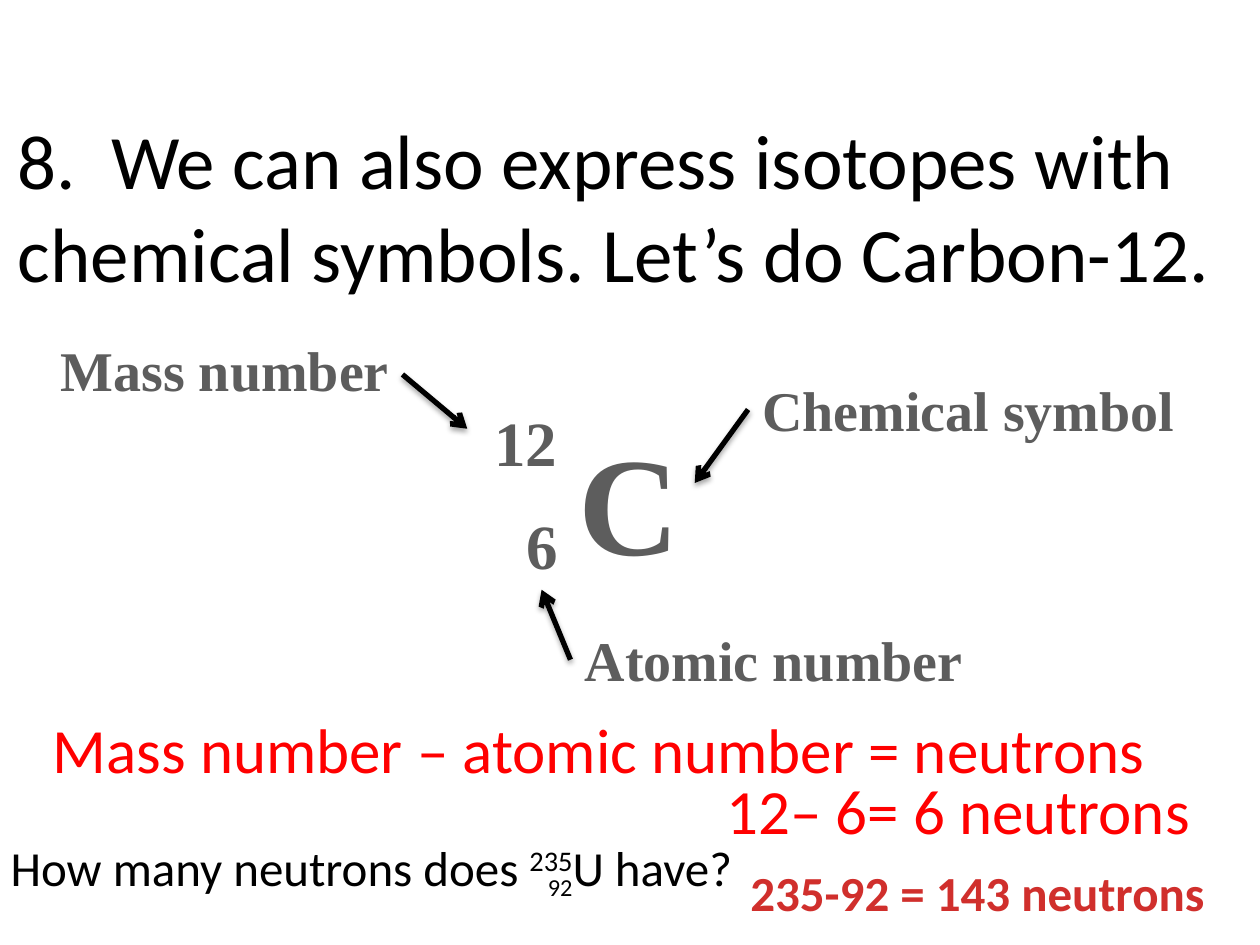
"""Build a slide on writing isotopes with chemical symbols."""
from typing import NamedTuple, Optional

from lxml.etree import SubElement
from pptx import Presentation
from pptx.dml.color import RGBColor
from pptx.enum.shapes import MSO_CONNECTOR as CONN
from pptx.enum.text import MSO_ANCHOR as ANCHOR, MSO_AUTO_SIZE as AUTO, PP_ALIGN as ALIGN
from pptx.oxml.ns import qn
from pptx.util import Pt

COLORS = {"black": "000000", "gray": "5D5D5D", "red": "FF0000", "crimson": "D02F2C"}
LINE_HEIGHT = 1.22
INSET = 3.6


class Run(NamedTuple):
    text: str
    raised: bool = False


class Style(NamedTuple):
    size: float
    color: str
    font: str = "Calibri"
    bold: bool = False


class Box(NamedTuple):
    left: float
    top: float
    width: float
    height: float
    runs: tuple[Run, ...]
    style: Style
    align: ALIGN = ALIGN.CENTER


class Arrow(NamedTuple):
    start: tuple[float, float]
    end: tuple[float, float]
    label: Optional[str] = None


SYMBOL = Style(80, "gray", "Times New Roman", True)
NUMBER = SYMBOL._replace(size=36)
LABEL = SYMBOL._replace(size=32)
RULE = Style(36, "red")
QUESTION = Style(28, "black")

TITLE = Box(3, 42, 720, 204, (Run(
    "8.  We can also express isotopes with chemical symbols. Let’s do Carbon-12."),),
    Style(44, "black"), ALIGN.LEFT)
STATEMENTS = [
    Box(23, 403, 720, 93, (Run("Mass number – atomic number = neutrons"),), RULE, ALIGN.LEFT),
    Box(408, 438, 396, 93, (Run("12– 6= 6 neutrons"),), RULE, ALIGN.LEFT),
    Box(-1, 484.5, 720, 55.5, (Run("How many neutrons does "), Run("235", True),
                               Run("U have?")), QUESTION, ALIGN.LEFT),
]
LABELS = [
    Box(323.5, 234, 72.5, 104.5, (Run("C"),), SYMBOL),
    Box(427.5, 211, 252, 46, (Run("Chemical symbol"),), LABEL),
    Box(326, 354, 232.5, 46, (Run("Atomic number"),), LABEL),
    Box(294, 286, 32, 51, (Run("6"),), NUMBER),
    Box(275, 227, 51, 51, (Run("12"),), NUMBER),
    Box(26.5, 188, 204, 46, (Run("Mass number"),), LABEL),
    Box(306, 492, 31, 36, (Run("92", True),), Style(24, "black"), ALIGN.LEFT),
    Box(420, 489.5, 277, 41, (Run("235-92 = 143 neutrons"),),
        QUESTION._replace(color="crimson", bold=True)),
]
ARROWS = [
    Arrow((427.5, 234), (397, 276), "Chemical symbol"),
    Arrow((326, 377), (309.5, 337), "Atomic number"),
    Arrow((230, 214), (267, 245)),
]


def fill_box(sp, box: Box, frame_format: dict) -> None:
    """Place a shape and write its formatted text."""
    for name in ("left", "top", "width", "height"):
        setattr(sp, name, Pt(getattr(box, name)))
    tf = sp.text_frame
    for name, value in frame_format.items():
        setattr(tf, name, value)
    p = tf.paragraphs[0]
    p.alignment = box.align
    style = box.style
    for run in box.runs:
        r = p.add_run()
        r.text = run.text
        for name, value in {"size": Pt(style.size), "name": style.font,
                            "bold": style.bold}.items():
            setattr(r.font, name, value)
        r.font.color.rgb = RGBColor.from_string(COLORS[style.color])
        if run.raised:
            r._r.get_or_add_rPr().set("baseline", "30000")


def fill_statement(sp, box: Box) -> None:
    """Write wrapped text that sits half a line above the middle of its box."""
    fill_box(sp, box, {
        "word_wrap": True, "auto_size": AUTO.NONE, "vertical_anchor": ANCHOR.MIDDLE,
        "margin_bottom": Pt(INSET + round(LINE_HEIGHT * box.style.size, 1))})


def add_text_box(s, box: Box):
    """Add an empty text box at the place of the given box."""
    return s.shapes.add_textbox(Pt(box.left), Pt(box.top), Pt(box.width), Pt(box.height))


def add_arrow(s, arrow: Arrow, labels: dict) -> None:
    """Draw a shadowed arrow, joined to its label's left side if it has one."""
    sp = s.shapes.add_connector(CONN.STRAIGHT, *map(Pt, arrow.start + arrow.end))
    if arrow.label:
        sp.begin_connect(labels[arrow.label], 1)
    sp.line.width = Pt(3)
    sp.line.color.rgb = RGBColor.from_string(COLORS["black"])
    SubElement(sp.line._get_or_add_ln(), qn("a:tailEnd"), type="arrow")
    effects = SubElement(sp._element.spPr, qn("a:effectLst"))
    shadow = SubElement(effects, qn("a:outerShdw"), blurRad=str(Pt(3.1)),
                        dist=str(Pt(1.8)), dir="5400000", rotWithShape="0")
    color = SubElement(shadow, qn("a:srgbClr"), val=COLORS["black"])
    SubElement(color, qn("a:alpha"), val="35000")


def main() -> None:
    """Build and save the slide."""
    prs = Presentation()
    prs.slide_width, prs.slide_height = Pt(720), Pt(540)
    s = prs.slides.add_slide(prs.slide_layouts[5])
    fill_statement(s.shapes.title, TITLE)
    labels = {}
    for box in LABELS:
        sp = add_text_box(s, box)
        fill_box(sp, box, {"word_wrap": False, "auto_size": AUTO.SHAPE_TO_FIT_TEXT})
        labels[box.runs[0].text] = sp
    for arrow in ARROWS:
        add_arrow(s, arrow, labels)
    for box in STATEMENTS:
        fill_statement(add_text_box(s, box), box)
    prs.save("out.pptx")


if __name__ == "__main__":
    main()
